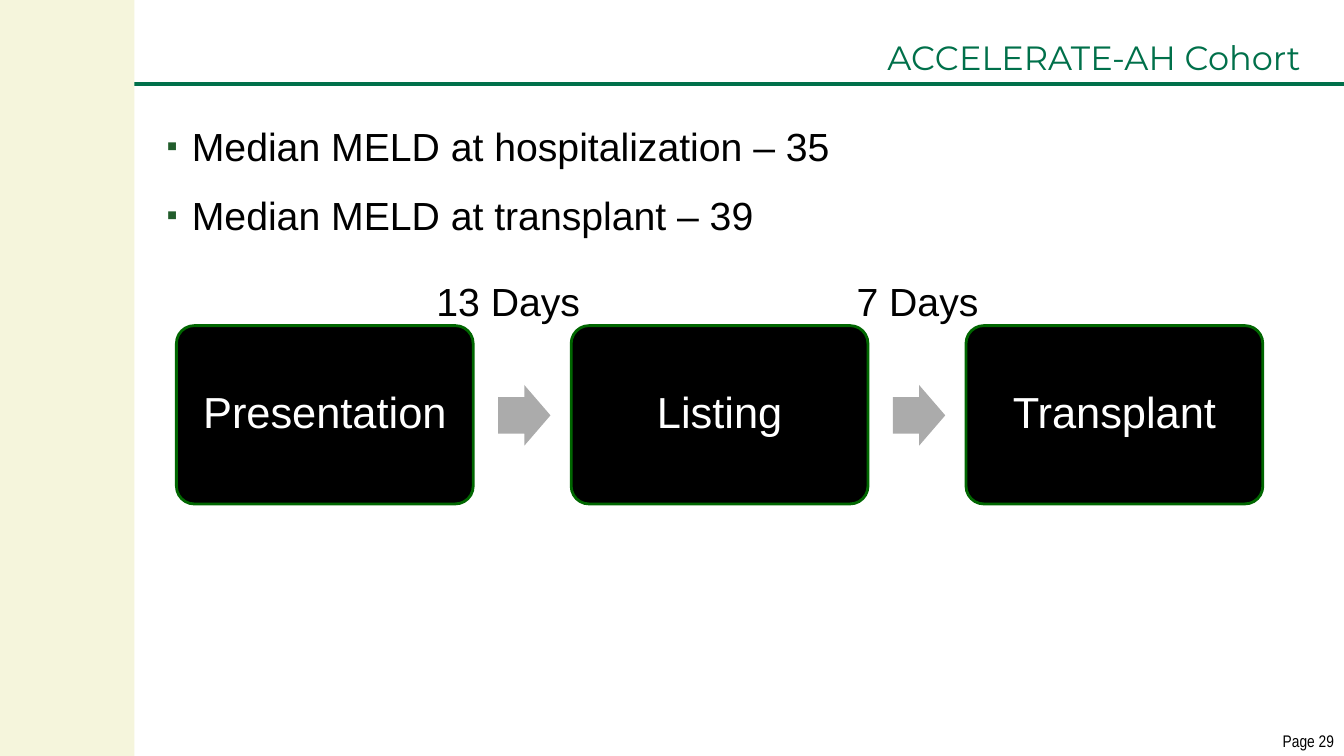
from lxml import etree
from pptx import Presentation
from pptx.dml.color import RGBColor
from pptx.enum.shapes import MSO_CONNECTOR as Connector, MSO_SHAPE as Shape
from pptx.enum.text import MSO_ANCHOR as Anchor, PP_ALIGN as Align
from pptx.oxml.ns import qn
from pptx.util import Pt

GREEN = RGBColor(0x00, 0x70, 0x4A)
BORDER_GREEN = RGBColor(0x00, 0x66, 0x00)
BULLET_GREEN = RGBColor(0x22, 0x5D, 0x2C)
BEIGE = RGBColor(0xF5, 0xF5, 0xDC)
GRAY = RGBColor(0xAB, 0xAB, 0xAB)
BLACK = RGBColor(0, 0, 0)
WHITE = RGBColor(0xFF, 0xFF, 0xFF)


def add_bullet(para):
    """Give a paragraph a small square bullet with a hanging indent."""
    properties = para._p.get_or_add_pPr()
    properties.set("marL", str(Pt(18)))
    properties.set("indent", str(-Pt(18)))
    color = etree.SubElement(properties, qn("a:buClr"))
    etree.SubElement(color, qn("a:srgbClr"), val=str(BULLET_GREEN))
    etree.SubElement(properties, qn("a:buSzPct"), val="80000")
    etree.SubElement(properties, qn("a:buFont"), typeface="Arial")
    etree.SubElement(properties, qn("a:buChar"), char="▪")


def write_text(frame, lines, size=28, font="Arial", color=BLACK, align=Align.LEFT,
               anchor=Anchor.TOP, wrap=True, spacing=None, after=0, bullet=False):
    """Fill a text frame with one paragraph per line."""
    frame.word_wrap = wrap
    frame.vertical_anchor = anchor
    for index, line in enumerate(lines):
        para = frame.paragraphs[0] if index == 0 else frame.add_paragraph()
        para.alignment = align
        para.space_after = Pt(after)
        if spacing:
            para.line_spacing = spacing
        if bullet:
            add_bullet(para)
        span = para.add_run()
        span.text = line
        span.font.size = Pt(size)
        span.font.name = font
        span.font.color.rgb = color


class SlideBuilder:
    """Holds the style and the current slide."""

    def __init__(self, page):
        self.page = page
        self.rule_color = GREEN
        self.border_color = BORDER_GREEN

    def rule(self, left, top, right):
        line = self.page.shapes.add_connector(
            Connector.STRAIGHT, Pt(left), Pt(top), Pt(right), Pt(top))
        line.line.color.rgb = self.rule_color
        line.line.width = Pt(2.25)
        etree.SubElement(line._element.spPr, qn("a:effectLst"))

    def shape(self, kind, left, top, width, height, fill, border=0, adjust=()):
        box = self.page.shapes.add_shape(kind, Pt(left), Pt(top), Pt(width), Pt(height))
        box.shadow.inherit = False
        box.fill.solid()
        box.fill.fore_color.rgb = fill
        if border:
            box.line.color.rgb = self.border_color
            box.line.width = Pt(border)
        else:
            box.line.fill.background()
        for index, value in enumerate(adjust):
            box.adjustments[index] = value
        return box

    def text(self, left, top, width, height, *lines, **style):
        box = self.page.shapes.add_textbox(Pt(left), Pt(top), Pt(width), Pt(height))
        write_text(box.text_frame, lines, **style)


def main():
    deck = Presentation()
    deck.slide_width, deck.slide_height = Pt(960), Pt(540)
    slide = SlideBuilder(deck.slides.add_slide(deck.slide_layouts[6]))

    # Frame: header rule, page number, side band
    slide.rule(0, 60, 960)
    slide.text(907, 518.4, 53, 21.6, "Page 29", size=12, font="Arial Narrow",
               align=Align.RIGHT, wrap=False)
    slide.shape(Shape.RECTANGLE, 0, 0, 96, 540, BEIGE)

    # Title and bullets
    slide.text(168, 0, 768, 59, "ACCELERATE-AH Cohort", size=24, font="Montserrat",
               color=GREEN, align=Align.RIGHT, anchor=Anchor.BOTTOM, spacing=0.9)
    slide.text(112, 84, 828, 348, "Median MELD at hospitalization – 35",
               "Median MELD at transplant – 39", after=15.6, bullet=True)

    # Process: stages at an equal pitch, an arrow after each but the last
    stages = ["Presentation", "Listing", "Transplant"]
    first_left, pitch = 126, 282
    for index, stage in enumerate(stages):
        left = first_left + index * pitch
        box = slide.shape(Shape.ROUNDED_RECTANGLE, left, 232.6, 212, 127.4, BLACK,
                          border=2, adjust=[0.1])
        write_text(box.text_frame, [stage], size=31, color=WHITE, align=Align.CENTER,
                   anchor=Anchor.MIDDLE, spacing=0.9)
        if index < len(stages) - 1:
            slide.shape(Shape.RIGHT_ARROW, left + 229.8, 275, 37.4, 43.4, GRAY,
                        adjust=[0.6, 0.5])

    # Time between stages
    for left, width, days in [(304.6, 118, "13 Days"), (604.8, 103, "7 Days")]:
        slide.text(left, 194.4, width, 41, days, wrap=False)

    deck.save("out.pptx")


if __name__ == "__main__":
    main()
